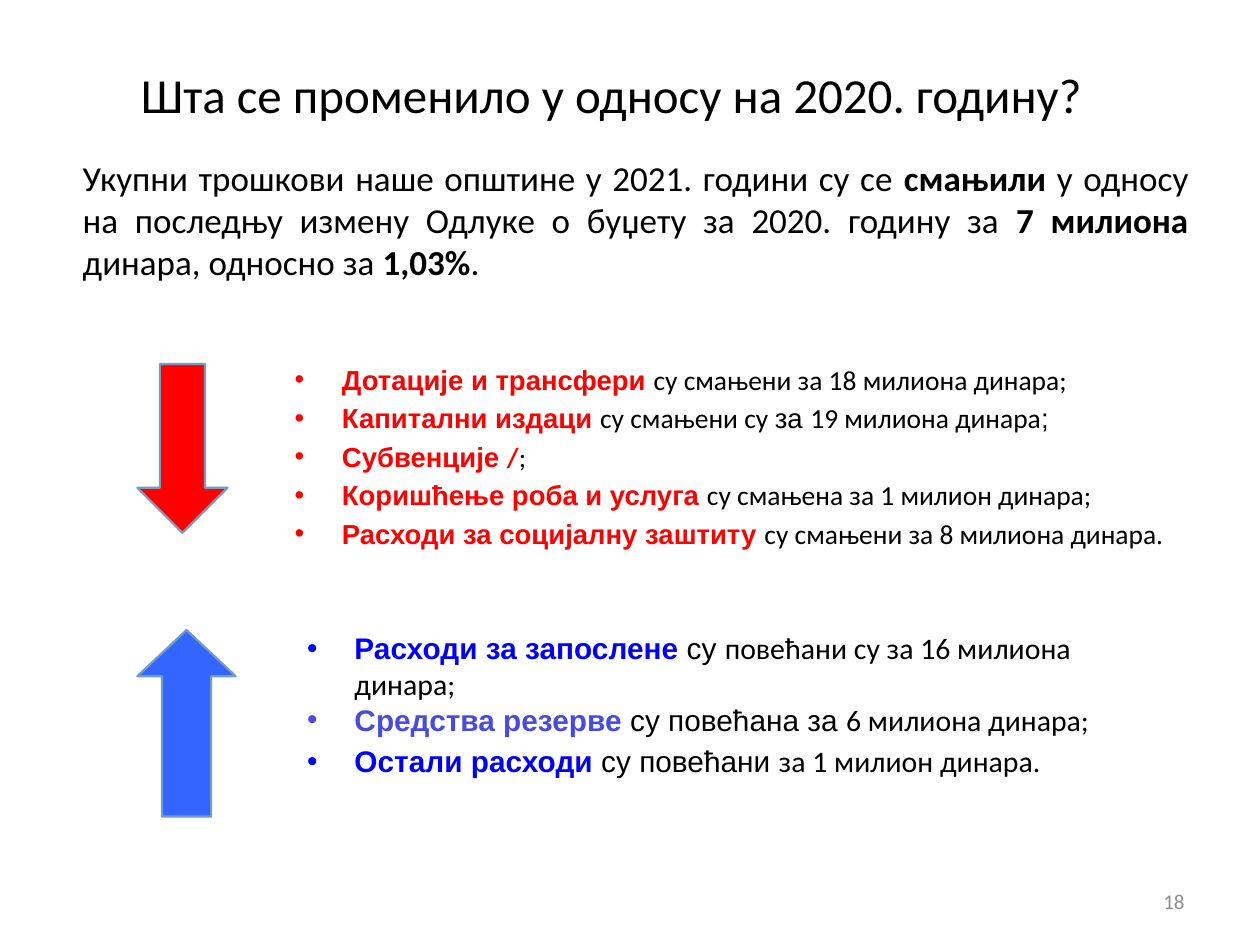
from lxml.etree import SubElement
from pptx import Presentation
from pptx.dml.color import RGBColor
from pptx.enum.shapes import MSO_SHAPE as Shape
from pptx.enum.text import MSO_ANCHOR as Anchor, MSO_AUTO_SIZE as AutoSize, PP_ALIGN as Align
from pptx.oxml.ns import qn
from pptx.util import Pt

COLORS = {
    "black": "000000", "red": "FF0000", "blue": "0000FF", "violet": "474BE1",
    "gray": "8C8C8C", "arrow_blue": "3366FF", "arrow_line": "739CC3",
}
INDENT = 27
SPACING = 0.2

TITLE = {"name": "Calibri", "bold": False, "color": "black"}
PLAIN = TITLE
STRONG = {**PLAIN, "bold": True}
ARIAL = {**PLAIN, "name": "Arial"}
RED = {"name": "Arial", "bold": True, "color": "red"}
RED_CALIBRI = {**RED, "name": "Calibri"}
BLUE = {**RED, "color": "blue"}
VIOLET = {**RED, "color": "violet"}
GRAY = {**PLAIN, "color": "gray"}

SUMMARY = [
    ("Укупни трошкови наше општине у 2021. години су се ", PLAIN),
    ("смањили ", STRONG),
    ("у односу на последњу измену Одлуке о буџету за 2020. годину за ", PLAIN),
    ("7 милиона ", STRONG),
    ("динара, односно за ", PLAIN),
    ("1,03%", STRONG),
    (".", PLAIN),
]
DECREASES = [
    [("Дотације и трансфери ", RED), ("су смањени за 18 милиона динара;", PLAIN)],
    [("Капитални издаци ", RED), ("су смањени су ", PLAIN), ("за ", ARIAL),
     ("19 милиона динара", PLAIN), (";", ARIAL)],
    [("Субвенције ", RED), ("/", RED_CALIBRI), (";", PLAIN)],
    [("Коришћење роба и услуга ", RED), ("су смањена за 1 милион динара;", PLAIN)],
    [("Расходи за социјалну заштиту ", RED), ("су смањени за 8 милиона динара.", PLAIN)],
]
INCREASES = [
    [("Расходи за запослене ", BLUE), ("су ", ARIAL),
     ("повећани су за 16 милиона динара;", PLAIN)],
    [("Средства резерве ", VIOLET), ("су повећана за ", ARIAL), ("6 милиона динара;", PLAIN)],
    [("Остали расходи ", BLUE), ("су повећани ", ARIAL), ("за 1 милион динара.", PLAIN)],
]


def points(box):
    return [Pt(length) for length in box]


def add_runs(paragraph, runs, size):
    for text, style in runs:
        run = paragraph.add_run()
        run.text = text
        run.font.size = Pt(size)
        for key, value in style.items():
            if key == "color":
                run.font.color.rgb = RGBColor.from_string(COLORS[value])
            else:
                setattr(run.font, key, value)


def set_frame(shape, anchor=Anchor.TOP):
    frame = shape.text_frame
    settings = {"word_wrap": True, "auto_size": AutoSize.NONE, "vertical_anchor": anchor}
    for key, value in settings.items():
        setattr(frame, key, value)
    return frame


def add_text(slide, box, runs, size, align, anchor=Anchor.TOP):
    frame = set_frame(slide.shapes.add_textbox(*points(box)), anchor)
    paragraph = frame.paragraphs[0]
    paragraph.alignment = align
    add_runs(paragraph, runs, size)
    return paragraph


def place_title(slide, box, text):
    title = slide.shapes.title
    title.left, title.top, title.width, title.height = points(box)
    paragraph = set_frame(title, Anchor.MIDDLE).paragraphs[0]
    paragraph.alignment = Align.CENTER
    add_runs(paragraph, [(text, TITLE)], 28)


def add_summary(slide, box):
    paragraph = add_text(slide, box, SUMMARY, 20, Align.JUSTIFY)
    paragraph.space_before = Pt(20 * SPACING)
    paragraph._p.get_or_add_pPr().set("marL", str(Pt(2)))


def add_bullets(slide, box, items, size, spaced):
    frame = set_frame(slide.shapes.add_textbox(*points(box)))
    for index, runs in enumerate(items):
        paragraph = frame.add_paragraph() if index else frame.paragraphs[0]
        paragraph.space_before = Pt(size * SPACING if index in spaced else 0)
        properties = paragraph._p.get_or_add_pPr()
        properties.set("marL", str(Pt(INDENT)))
        properties.set("indent", str(-Pt(INDENT)))
        SubElement(properties, qn("a:buFont"), typeface="Arial")
        SubElement(properties, qn("a:buChar"), char="•")
        add_runs(paragraph, runs, size)


def add_arrow(slide, box, kind, head, color):
    arrow = slide.shapes.add_shape(kind, *points(box))
    arrow.shadow.inherit = False
    arrow.adjustments[0] = 0.5
    arrow.adjustments[1] = head
    arrow.fill.solid()
    arrow.fill.fore_color.rgb = RGBColor.from_string(COLORS[color])
    arrow.line.color.rgb = RGBColor.from_string(COLORS["arrow_line"])
    arrow.line.width = Pt(1.25)


def main():
    presentation = Presentation()
    presentation.slide_width, presentation.slide_height = Pt(720), Pt(540)
    slide = presentation.slides.add_slide(presentation.slide_layouts[5])
    place_title(slide, (25.2, 20.9, 648, 65.5), "Шта се променило у односу на 2020. годину?")
    add_summary(slide, (38.2, 85.7, 648, 89.3))
    add_bullets(slide, (161.3, 203.8, 539.3, 115.9), DECREASES, 15.7, range(5))
    add_bullets(slide, (168.5, 356.4, 489.6, 133.2), INCREASES, 17, [2])
    add_arrow(slide, (78.5, 208, 51.5, 96.5), Shape.DOWN_ARROW, 0.5, "red")
    add_arrow(slide, (78.5, 360, 56.2, 106.6), Shape.UP_ARROW, 0.47, "arrow_blue")
    add_text(slide, (516.2, 500.4, 167.8, 28.8), [("18", GRAY)], 12, Align.RIGHT, Anchor.MIDDLE)
    presentation.save("out.pptx")


if __name__ == "__main__":
    main()
